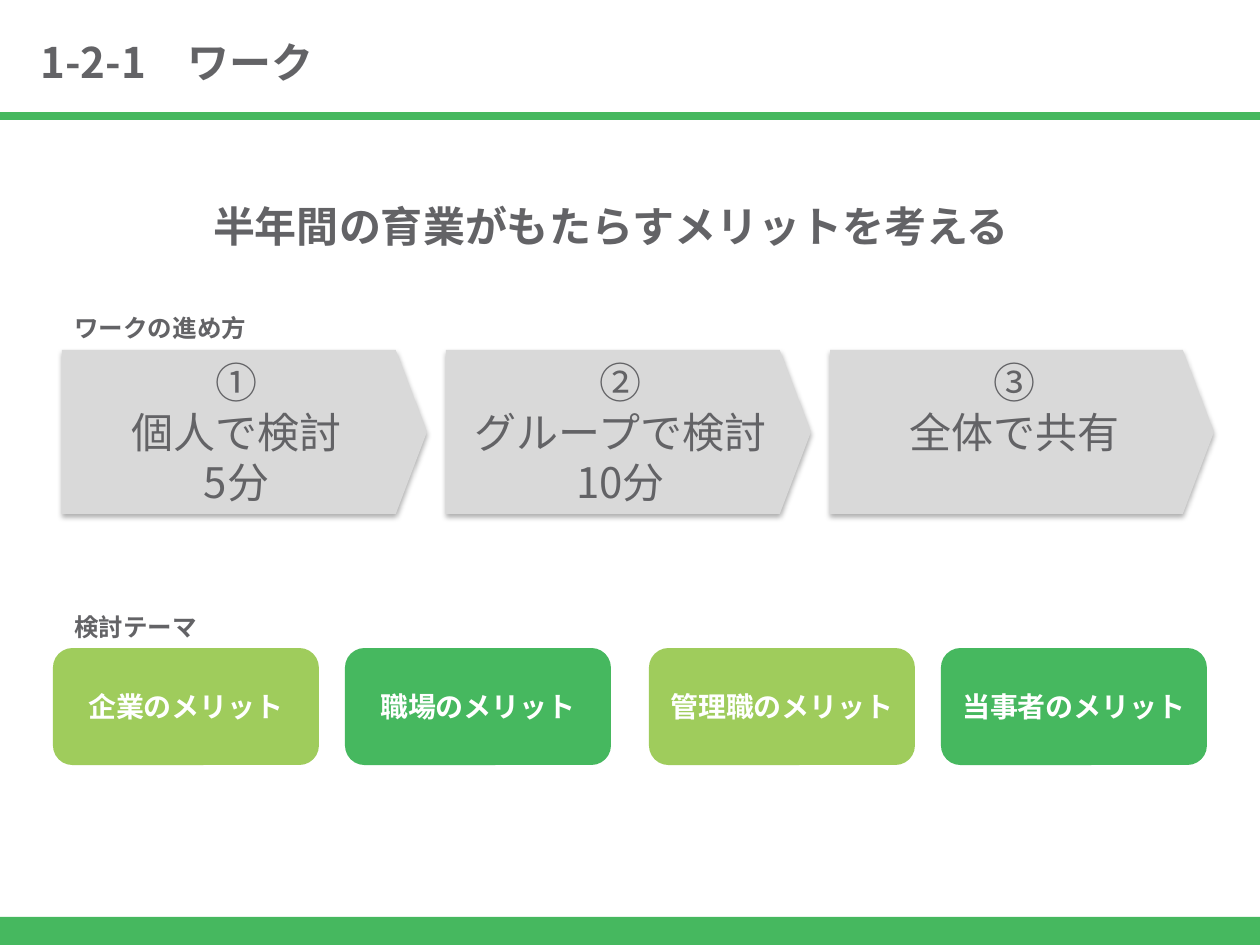
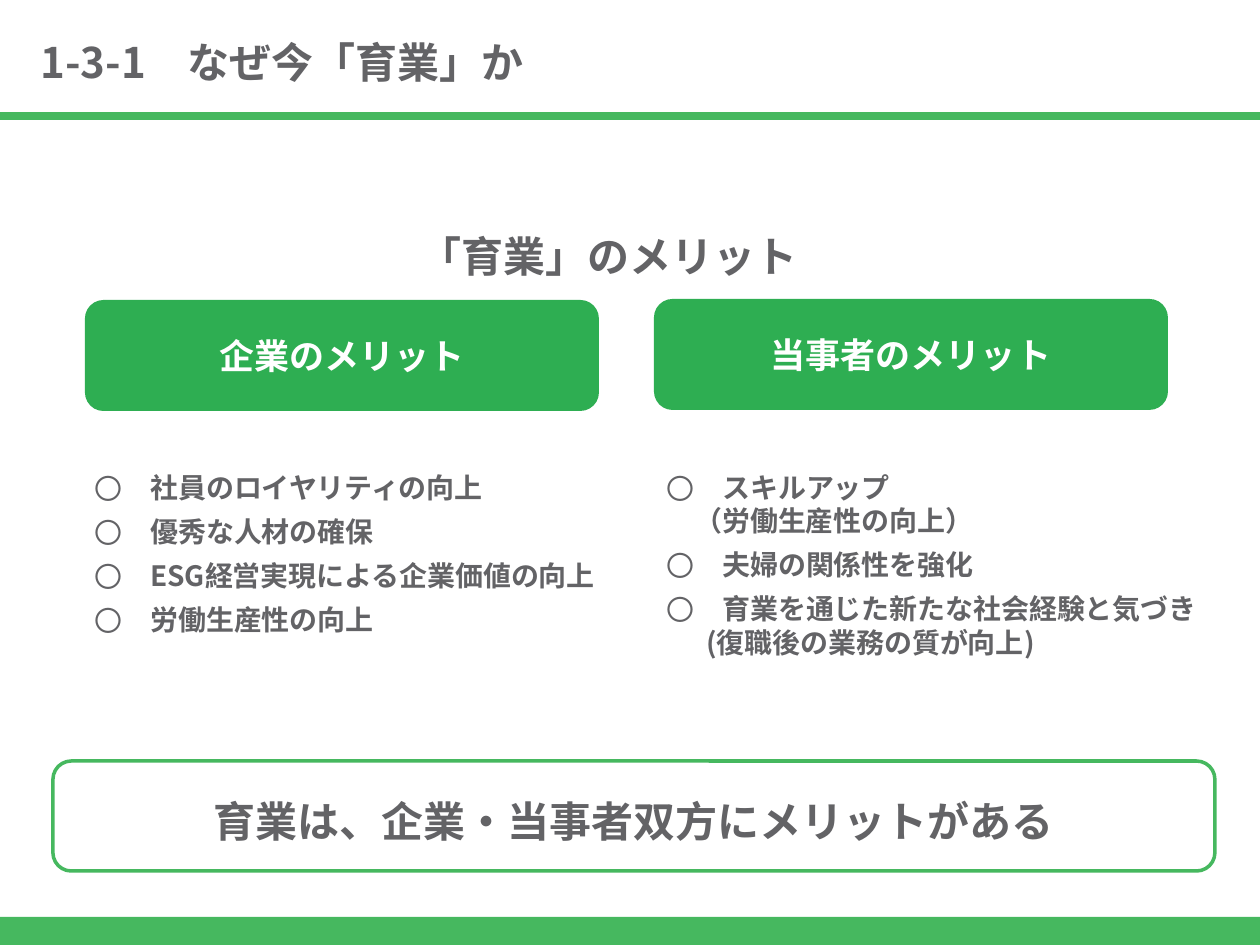
from dataclasses import dataclass

from lxml.etree import SubElement
from pptx import Presentation
from pptx.dml.color import RGBColor
from pptx.enum.shapes import MSO_CONNECTOR as Connector, MSO_SHAPE as Shape
from pptx.enum.text import MSO_ANCHOR as Anchor, PP_ALIGN as Align
from pptx.oxml.ns import qn
from pptx.util import Emu, Pt


@dataclass(frozen=True)
class Theme:
    font: str = "Noto Sans CJK JP"
    text: str = "636366"
    white: str = "FFFFFF"
    green: str = "46B85F"
    deep_green: str = "2EAE52"
    lime: str = "9FCC5C"
    grey: str = "D9D9D9"
    title: int = 24
    heading: int = 20
    body: int = 16
    label: int = 14


THEME = Theme()
EMU_PER_PX = 914400 / 126
SLIDE_WIDTH, SLIDE_HEIGHT = 1260, 945
BULLET, BULLET_INDENT = "〇", 56

WORK = {
    "title": "1-2-1　ワーク",
    "heading": "半年間の育業がもたらすメリットを考える",
    "steps_label": "ワークの進め方",
    "steps": [
        (["①", "個人で検討", "5分"], 365),
        (["②", "グループで検討", "10分"], 365),
        (["③", "全体で共有"], 384),
    ],
    "themes_label": "検討テーマ",
    "themes": ["企業のメリット", "職場のメリット", "管理職のメリット", "当事者のメリット"],
}

# A merit is a list of lines; each line after the first is a (text, indent) note.
WHY_NOW = {
    "title": "1-3-1　なぜ今「育業」か",
    "heading": "「育業」のメリット",
    "columns": [
        {
            "name": "企業のメリット",
            "header_at": (85, 300),
            "list_at": (82, 464, 558, 230),
            "merits": [
                ["社員のロイヤリティの向上"],
                ["優秀な人材の確保"],
                ["ESG経営実現による企業価値の向上"],
                ["労働生産性の向上"],
            ],
        },
        {
            "name": "当事者のメリット",
            "header_at": (654, 299),
            "list_at": (654, 464, 591, 214),
            "merits": [
                ["スキルアップ", ("（労働生産性の向上）", 28)],
                ["夫婦の関係性を強化"],
                ["育業を通じた新たな社会経験と気づき", ("(復職後の業務の質が向上)", 40)],
            ],
        },
    ],
    "conclusion": "育業は、企業・当事者双方にメリットがある",
}


def px(length):
    return Emu(round(length * EMU_PER_PX))


def box(*lengths):
    return [px(length) for length in lengths]


def rgb(color):
    return RGBColor.from_string(color)


def style(paragraph, size, color=THEME.text, bold=True, align=Align.LEFT):
    paragraph.alignment = align
    font = paragraph.font
    font.name, font.size, font.bold = THEME.font, Pt(size), bold
    font.color.rgb = rgb(color)
    defaults = paragraph._p.pPr.find(qn("a:defRPr"))
    SubElement(defaults, qn("a:ea"), typeface=THEME.font)


def write(frame, lines, size, **options):
    frame.word_wrap = True
    for index, line in enumerate(lines):
        paragraph = frame.add_paragraph() if index else frame.paragraphs[0]
        paragraph.text = line
        style(paragraph, size, **options)


def add_text(slide, area, text, size, align=Align.LEFT):
    write(slide.shapes.add_textbox(*box(*area)).text_frame, [text], size, align=align)


def add_shape(slide, kind, area, fill, line=None):
    shape = slide.shapes.add_shape(kind, *box(*area))
    shape.shadow.inherit = False
    shape.fill.solid()
    shape.fill.fore_color.rgb = rgb(fill)
    if line:
        shape.line.color.rgb = rgb(line)
        shape.line.width = Pt(2)
    else:
        shape.line.fill.background()
    return shape


def add_rounded_box(slide, area, text, size, fill, color=THEME.white, line=None):
    shape = add_shape(slide, Shape.ROUNDED_RECTANGLE, area, fill, line)
    shape.text_frame.vertical_anchor = Anchor.MIDDLE
    write(shape.text_frame, [text], size, color=color, align=Align.CENTER)
    return shape


def add_soft_shadow(shape):
    effects = shape._element.spPr.find(qn("a:effectLst"))
    shadow = SubElement(effects, qn("a:outerShdw"), blurRad=str(Pt(3.1)),
                        dist=str(Pt(1.6)), dir="5400000", rotWithShape="0")
    black = SubElement(shadow, qn("a:srgbClr"), val="000000")
    SubElement(black, qn("a:alpha"), val="31000")


def add_step(slide, area, lines):
    step = add_shape(slide, Shape.PENTAGON, area, THEME.grey)
    step.adjustments[0] = 0.19
    add_soft_shadow(step)
    step.text_frame.vertical_anchor = Anchor.TOP
    write(step.text_frame, lines, THEME.title, bold=False, align=Align.CENTER)


def set_bullet(paragraph):
    properties = paragraph._p.get_or_add_pPr()
    properties.set("marL", str(px(BULLET_INDENT)))
    properties.set("indent", str(-px(BULLET_INDENT)))
    color = SubElement(properties, qn("a:buClr"))
    SubElement(color, qn("a:srgbClr"), val=THEME.text)
    SubElement(properties, qn("a:buFont"), typeface=THEME.font)
    SubElement(properties, qn("a:buChar"), char=BULLET)


def add_merits(slide, area, merits):
    frame = slide.shapes.add_textbox(*box(*area)).text_frame
    frame.word_wrap = True
    for index, (merit, *notes) in enumerate(merits):
        paragraph = frame.add_paragraph() if index else frame.paragraphs[0]
        paragraph.text = merit
        set_bullet(paragraph)
        style(paragraph, THEME.body)
        if index:
            paragraph.space_before = Pt(6)
        for note, indent in notes:
            paragraph = frame.add_paragraph()
            paragraph.text = note
            paragraph._p.get_or_add_pPr().set("marL", str(px(indent)))
            style(paragraph, THEME.body)


def add_framed_slide(presentation, title):
    """Add a slide with the title, the rule below it and the bottom band."""
    slide = presentation.slides.add_slide(presentation.slide_layouts[6])
    add_shape(slide, Shape.RECTANGLE, (0, 917, SLIDE_WIDTH, 28), THEME.green)
    rule = slide.shapes.add_connector(Connector.STRAIGHT, *box(0, 116, SLIDE_WIDTH, 116))
    rule.line.color.rgb = rgb(THEME.green)
    rule.line.width = Pt(4.5)
    SubElement(rule._element.spPr, qn("a:effectLst"))
    add_text(slide, (28, 30, 750, 63), title, THEME.title)
    return slide


def build_work(presentation):
    slide = add_framed_slide(presentation, WORK["title"])
    add_text(slide, (25, 194, 1172, 63), WORK["heading"], THEME.title, Align.CENTER)

    add_text(slide, (62, 307, 234, 43), WORK["steps_label"], THEME.label)
    left, gap = 62, 19
    for lines, width in WORK["steps"]:
        add_step(slide, (left, 350, width, 164), lines)
        left += width + gap

    add_text(slide, (62, 606, 234, 43), WORK["themes_label"], THEME.label)
    for index, name in enumerate(WORK["themes"]):
        pair, member = divmod(index, 2)
        area = (53 + 596 * pair + 292 * member, 648, 266, 117)
        fill = THEME.green if member else THEME.lime
        add_rounded_box(slide, area, name, THEME.body, fill)


def build_why_now(presentation):
    slide = add_framed_slide(presentation, WHY_NOW["title"])
    add_text(slide, (23, 224, 1172, 63), WHY_NOW["heading"], THEME.title, Align.CENTER)
    for column in WHY_NOW["columns"]:
        add_rounded_box(slide, (*column["header_at"], 514, 111), column["name"],
                        THEME.heading, THEME.deep_green)
        add_merits(slide, column["list_at"], column["merits"])
    conclusion = add_rounded_box(slide, (53, 761, 1162, 110), WHY_NOW["conclusion"],
                                 THEME.title, THEME.white, THEME.text, THEME.green)
    conclusion.text_frame.margin_top = px(10)
    conclusion.text_frame.margin_bottom = 0


def main():
    presentation = Presentation()
    presentation.slide_width, presentation.slide_height = box(SLIDE_WIDTH, SLIDE_HEIGHT)
    build_work(presentation)
    build_why_now(presentation)
    presentation.save("out.pptx")


if __name__ == "__main__":
    main()
